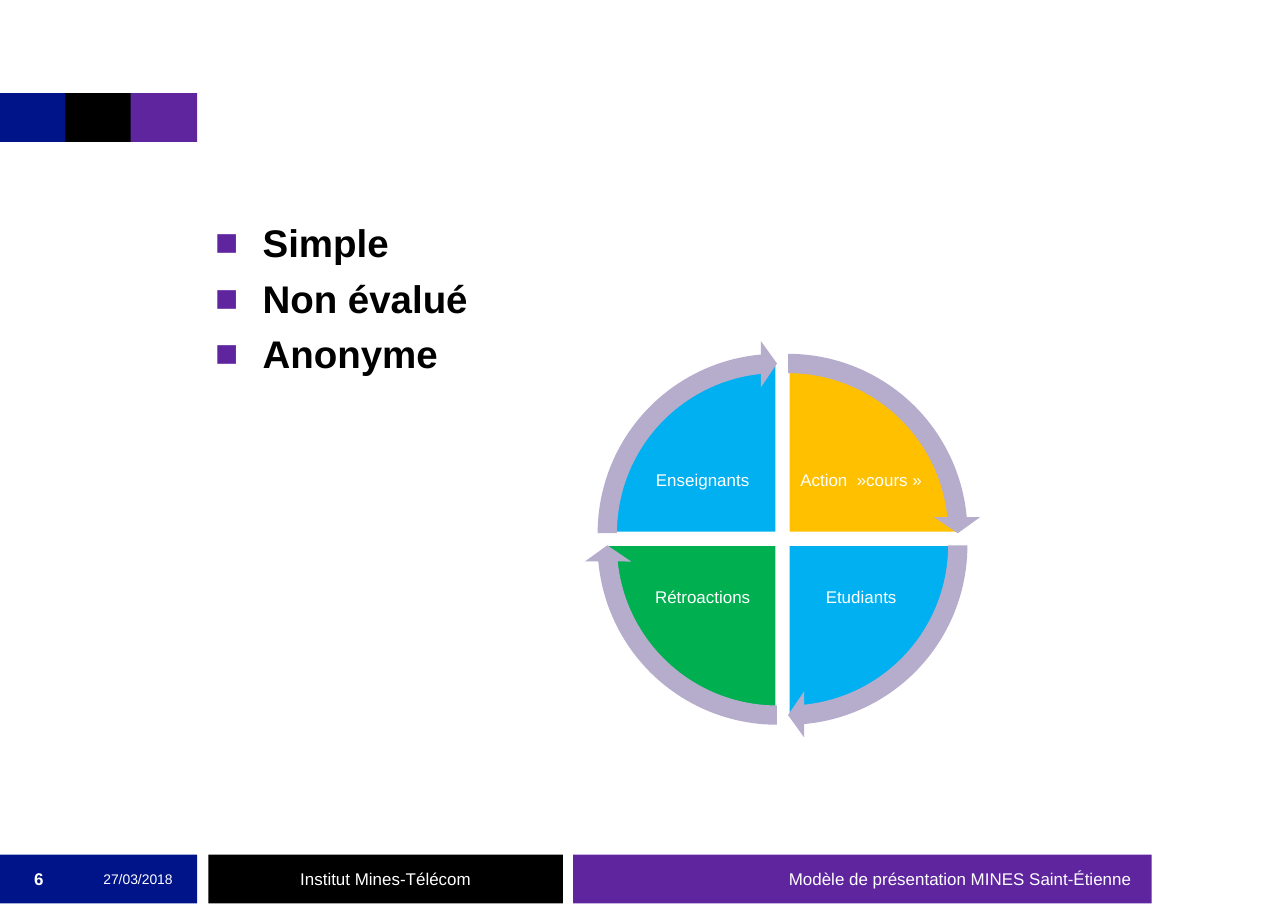
"""Builds the slide on the simple, ungraded and anonymous feedback cycle."""
from dataclasses import dataclass

from lxml.etree import SubElement
from pptx import Presentation
from pptx.dml.color import RGBColor
from pptx.enum.shapes import MSO_SHAPE
from pptx.enum.text import MSO_ANCHOR, MSO_AUTO_SIZE, PP_ALIGN
from pptx.oxml.ns import qn
from pptx.shapes.autoshape import Shape
from pptx.slide import Slide
from pptx.text.text import TextFrame
from pptx.util import Inches, Pt


@dataclass(frozen=True)
class Theme:
    """Colours and type of the slide."""
    font: str = "Arial"
    navy: str = "001489"
    black: str = "000000"
    purple: str = "5F259F"
    white: str = "FFFFFF"
    amber: str = "FFC000"
    sky: str = "00B0F0"
    green: str = "00B050"
    lilac: str = "B6ADCD"
    point_size: float = 25
    label_size: float = 11
    date_size: float = 9


@dataclass(frozen=True)
class Box:
    """Place and size in inches."""
    left: float
    top: float
    width: float
    height: float

    def lengths(self) -> tuple[Inches, Inches, Inches, Inches]:
        """Return the box as slide lengths."""
        return Inches(self.left), Inches(self.top), Inches(self.width), Inches(self.height)


@dataclass(frozen=True)
class Caption:
    """One line of white text in a box."""
    text: str
    box: Box
    size: float
    bold: bool = False
    align: PP_ALIGN = PP_ALIGN.CENTER
    margin_x: float = 0.11
    margin_right: float = 0.11
    margin_y: float = 0.06
    line_spacing: float = 1.0


@dataclass(frozen=True)
class Step:
    """One quarter of the cycle; column and row are 0 or 1."""
    name: str
    color: str
    column: int
    row: int


THEME = Theme()
POINTS = ("Simple", "Non évalué", "Anonyme")
STEPS = (
    Step("Action  »cours »", THEME.amber, 1, 0),
    Step("Etudiants", THEME.sky, 1, 1),
    Step("Rétroactions", THEME.green, 0, 1),
    Step("Enseignants", THEME.sky, 0, 0),
)
FULL_TURN, QUARTER_TURN, ARROW_SWEEP = 216, 54, 50.73
PIE_SIZE, ARROW_SIZE = 3.1, 3.48
QUARTER_GAP = 0.1
FOOTER_TOP, BAND_HEIGHT = 7.71, 0.44
FOOTER_BANDS = (
    (THEME.navy, Box(0, FOOTER_TOP, 1.78, BAND_HEIGHT)),
    (THEME.black, Box(1.88, FOOTER_TOP, 3.2, BAND_HEIGHT)),
    (THEME.purple, Box(5.17, FOOTER_TOP, 5.22, BAND_HEIGHT)),
)
FOOTER_CAPTIONS = (
    Caption("6", Box(0.01, FOOTER_TOP, 0.68, BAND_HEIGHT), THEME.label_size, bold=True),
    Caption("27/03/2018", Box(0.69, FOOTER_TOP, 1.11, BAND_HEIGHT), THEME.date_size),
    Caption("Institut Mines-Télécom", FOOTER_BANDS[1][1], THEME.label_size),
    Caption("Modèle de présentation MINES Saint-Étienne", FOOTER_BANDS[2][1],
            THEME.label_size, align=PP_ALIGN.RIGHT, margin_right=0.18),
)


def add_filled(slide: Slide, kind: MSO_SHAPE, box: Box, color: str) -> Shape:
    """Add a preset shape with a plain fill and no line."""
    shape = slide.shapes.add_shape(kind, *box.lengths())
    shape.shadow.inherit = False
    shape.fill.solid()
    shape.fill.fore_color.rgb = RGBColor.from_string(color)
    shape.line.fill.background()
    return shape


def set_margins(frame: TextFrame, left: float, right: float, vertical: float) -> None:
    """Set the insets of a text frame."""
    frame.margin_left, frame.margin_right = Inches(left), Inches(right)
    frame.margin_top = frame.margin_bottom = Inches(vertical)


def add_caption(slide: Slide, caption: Caption) -> None:
    """Add a vertically centred caption."""
    frame = slide.shapes.add_textbox(*caption.box.lengths()).text_frame
    frame.word_wrap = True
    frame.vertical_anchor = MSO_ANCHOR.MIDDLE
    set_margins(frame, caption.margin_x, caption.margin_right, caption.margin_y)
    paragraph = frame.paragraphs[0]
    paragraph.text = caption.text
    paragraph.alignment = caption.align
    paragraph.line_spacing = caption.line_spacing
    paragraph.font.name, paragraph.font.size = THEME.font, Pt(caption.size)
    paragraph.font.bold = caption.bold
    paragraph.font.color.rgb = RGBColor.from_string(THEME.white)


def add_points(slide: Slide) -> None:
    """Fill the body placeholder with the bulleted points."""
    body = slide.placeholders[1]
    body.left, body.top, body.width, body.height = Box(1.83, 1.92, 9.16, 1.75).lengths()
    frame = body.text_frame
    frame.auto_size = MSO_AUTO_SIZE.NONE
    set_margins(frame, 0.11, 0.11, 0.06)
    frame.text = "\n".join(POINTS)
    for index, paragraph in enumerate(frame.paragraphs):
        paragraph.space_before = Pt(6 if index else 0)
        properties = paragraph._p.get_or_add_pPr()
        properties.set("marL", str(Inches(0.43)))
        properties.set("indent", str(Inches(-0.43)))
        bullet_color = SubElement(properties, qn("a:buClr"))
        SubElement(bullet_color, qn("a:srgbClr"), val=THEME.purple)
        SubElement(properties, qn("a:buFont"), typeface=THEME.font)
        SubElement(properties, qn("a:buChar"), char="■")
        paragraph.font.name, paragraph.font.size = THEME.font, Pt(THEME.point_size)
        paragraph.font.bold = True
        paragraph.font.color.rgb = RGBColor.from_string(THEME.black)


def add_cycle(slide: Slide) -> None:
    """Draw the four quarters, their names and the arrows around them."""
    starts = [(3 + index) * QUARTER_TURN % FULL_TURN for index in range(len(STEPS))]
    for step, start in zip(STEPS, starts):
        pie_box = Box(5.46 + step.column * QUARTER_GAP, 3.26 + step.row * QUARTER_GAP,
                      PIE_SIZE, PIE_SIZE)
        pie = add_filled(slide, MSO_SHAPE.PIE, pie_box, step.color)
        pie.adjustments[0] = start
        pie.adjustments[1] = (start + QUARTER_TURN) % FULL_TURN
        pie.line.color.rgb = RGBColor.from_string(THEME.white)
        pie.line.width = Pt(2)
        name_box = Box(5.77 + step.column * 1.43, 3.91 + step.row * 1.06, 1.14, 0.85)
        add_caption(slide, Caption(step.name, name_box, THEME.label_size, margin_x=0.02,
                                   margin_right=0.02, margin_y=0.02, line_spacing=0.9))
    for step, start in zip(STEPS, starts):
        arrow_box = Box(5.27 + step.column * QUARTER_GAP, 3.07 + step.row * 0.11,
                        ARROW_SIZE, ARROW_SIZE)
        arrow = add_filled(slide, MSO_SHAPE.CIRCULAR_ARROW, arrow_box, THEME.lilac)
        for index, value in enumerate((0.05, 3.28, start + ARROW_SWEEP, start, 0.06)):
            arrow.adjustments[index] = value


def main() -> None:
    """Build and save the slide."""
    presentation = Presentation()
    presentation.slide_width, presentation.slide_height = Inches(11.62), Inches(8.29)
    slide = presentation.slides.add_slide(presentation.slide_layouts[1])
    title = slide.shapes.title._element
    title.getparent().remove(title)
    for index, color in enumerate((THEME.navy, THEME.black, THEME.purple)):
        add_filled(slide, MSO_SHAPE.RECTANGLE, Box(index * 0.59, 0.84, 0.6, 0.44), color)
    for color, box in FOOTER_BANDS:
        add_filled(slide, MSO_SHAPE.RECTANGLE, box, color)
    add_points(slide)
    for caption in FOOTER_CAPTIONS:
        add_caption(slide, caption)
    add_cycle(slide)
    presentation.save("out.pptx")


if __name__ == "__main__":
    main()
